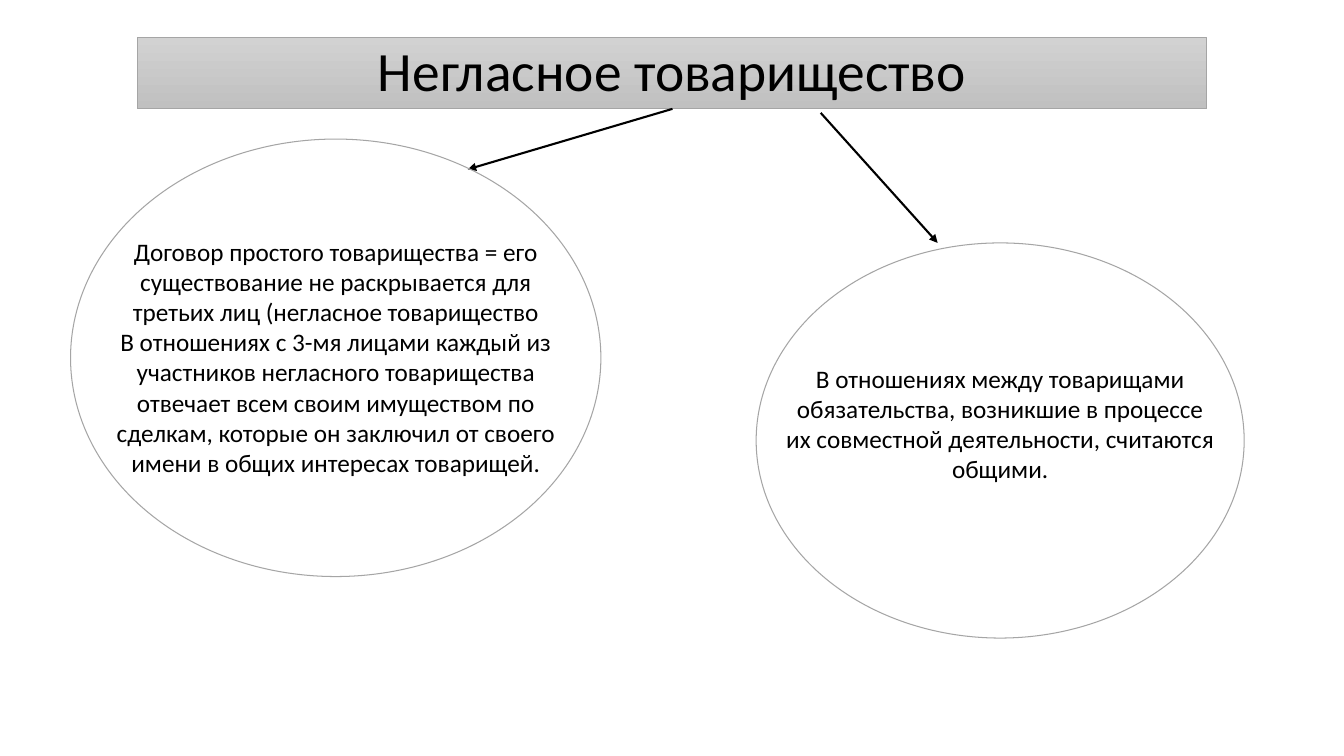
import dataclasses

import pptx
import pptx.dml.color
import pptx.enum.shapes
import pptx.enum.text
import pptx.oxml.ns
import pptx.util
from lxml import etree

Inches = pptx.util.Inches
Pt = pptx.util.Pt
Color = pptx.dml.color.RGBColor.from_string


@dataclasses.dataclass(frozen=True)
class Theme:
    """Colours, font and type sizes of the deck."""
    ink: str = "000000"
    outline: str = "A5A5A5"
    banner: tuple = ("D2D2D2", "C0C0C0")
    font: str = "Calibri"
    title_size: float = 39.6
    body_size: float = 18


THEME = Theme()

SECRECY = (
    "Договор простого товарищества = его существование не раскрывается "
    "для третьих лиц (негласное товарищество\n"
    "В отношениях с 3-мя лицами каждый из участников негласного товарищества "
    "отвечает всем своим имуществом по сделкам, которые он заключил от своего "
    "имени в общих интересах товарищей."
)
SHARED_DUTIES = (
    "В отношениях между товарищами обязательства, возникшие в процессе "
    "их совместной деятельности, считаются общими."
)


def write(frame, text, size):
    """Fill a text frame with centred paragraphs in the theme font."""
    frame.word_wrap = True
    frame.text = text
    for para in frame.paragraphs:
        para.alignment = pptx.enum.text.PP_ALIGN.CENTER
        for span in para.runs:
            span.font.name = THEME.font
            span.font.size = Pt(size)
            span.font.color.rgb = Color(THEME.ink)


def set_outline(shape, width):
    """Give a shape the thin grey outline."""
    shape.line.color.rgb = Color(THEME.outline)
    shape.line.width = Pt(width)


def add_banner(page, box, text):
    """Turn the title placeholder into a shaded banner."""
    title = page.shapes.title
    title.left, title.top, title.width, title.height = map(Inches, box)
    title.fill.gradient()
    title.fill.gradient_angle = 270
    for stop, color in zip(title.fill.gradient_stops, THEME.banner):
        stop.color.rgb = Color(color)
    set_outline(title, 0.5)
    frame = title.text_frame
    write(frame, text, THEME.title_size)
    frame.auto_size = pptx.enum.text.MSO_AUTO_SIZE.NONE
    frame.vertical_anchor = pptx.enum.text.MSO_ANCHOR.MIDDLE
    frame.paragraphs[0].line_spacing = 0.9


def add_bubble(page, box, text, text_top, text_size):
    """Draw an ellipse with a text box centred across it."""
    left, top, width, height = box
    text_width, text_height = text_size
    ellipse = page.shapes.add_shape(
        pptx.enum.shapes.MSO_SHAPE.OVAL, *map(Inches, box))
    ellipse.shadow.inherit = False
    ellipse.fill.background()
    set_outline(ellipse, 0.75)
    caption = page.shapes.add_textbox(
        Inches(left + (width - text_width) / 2), Inches(top + text_top),
        Inches(text_width), Inches(text_height))
    write(caption.text_frame, text, THEME.body_size)
    caption.text_frame.auto_size = pptx.enum.text.MSO_AUTO_SIZE.SHAPE_TO_FIT_TEXT


def add_arrow(page, start, end):
    """Draw a straight arrow between two points."""
    arrow = page.shapes.add_connector(
        pptx.enum.shapes.MSO_CONNECTOR.STRAIGHT, *map(Inches, start + end))
    arrow.line.color.rgb = Color(THEME.ink)
    arrow.line.width = Pt(1.5)
    qualified = pptx.oxml.ns.qn
    etree.SubElement(arrow.line._get_or_add_ln(), qualified("a:tailEnd"), type="triangle")
    etree.SubElement(arrow._element.spPr, qualified("a:effectLst"))


def build_partnership_page(deck):
    """Add the page with a banner and two linked bubbles."""
    page = deck.slides.add_slide(deck.slide_layouts.get_by_name("Title Only"))
    add_banner(page, (1.36, 0.37, 10.61, 0.71), "Негласное товарищество")
    add_arrow(page, (6.67, 1.08), (4.64, 1.68))
    add_bubble(page, (0.7, 1.38, 5.26, 4.34), SECRECY, 0.91, (4.62, 2.52))
    add_arrow(page, (8.14, 1.12), (9.3, 2.41))
    add_bubble(page, (7.5, 2.41, 4.84, 3.92), SHARED_DUTIES, 1.14, (4.5, 1.31))


def main():
    """Build and save the deck."""
    deck = pptx.Presentation()
    deck.slide_width, deck.slide_height = Inches(13.33), Inches(7.5)
    build_partnership_page(deck)
    deck.save("out.pptx")


if __name__ == "__main__":
    main()
